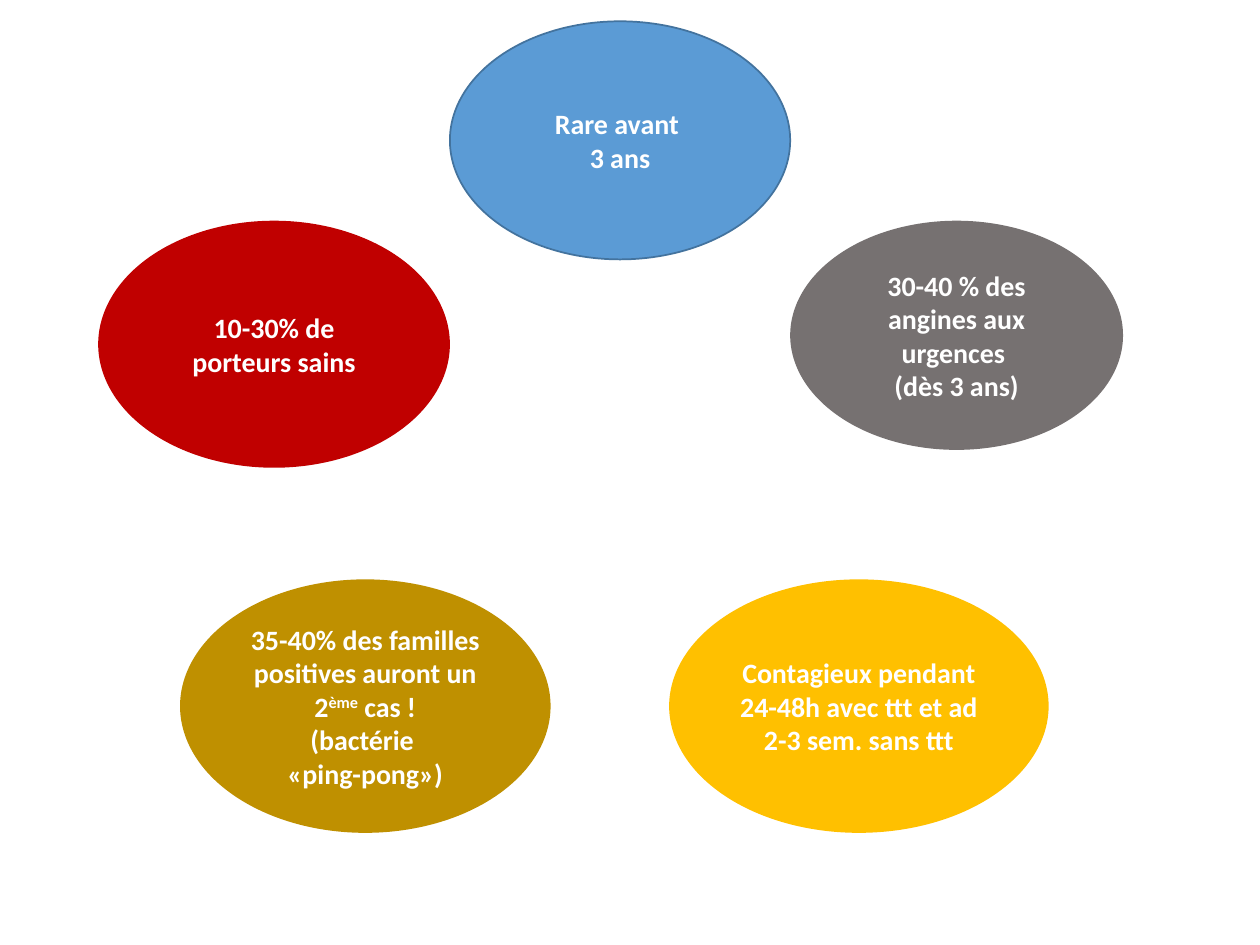
from dataclasses import dataclass
from typing import Optional

from pptx import Presentation, util as u
from pptx.dml.color import RGBColor
from pptx.enum import shapes, text

WHITE = RGBColor(0xFF, 0xFF, 0xFF)
BLUE = RGBColor(0x5B, 0x9B, 0xD5)
DARK_BLUE = RGBColor(0x43, 0x73, 0x9E)
GREY = RGBColor(0x76, 0x71, 0x71)
RED = RGBColor(0xC0, 0x00, 0x00)
YELLOW = RGBColor(0xFF, 0xC0, 0x00)
OCHRE = RGBColor(0xBF, 0x90, 0x00)

UPPER_ROW = 4.45
LOWER_ROW = 11.68
LOWER_HEIGHT = 5.11


@dataclass(frozen=True)
class Fact:
    left: float
    top: float
    width: float
    height: float
    fill: RGBColor
    lines: tuple[str, ...]
    outline: Optional[RGBColor] = None
    superscript: str = ""


FACTS = (
    Fact(9.07, 0.43, 6.86, 4.8, BLUE, ("Rare avant ", "3 ans"), outline=DARK_BLUE),
    Fact(15.93, UPPER_ROW, 6.71, 4.62, GREY,
         ("30-40 % des angines aux urgences ", "(dès 3 ans)")),
    Fact(1.98, UPPER_ROW, 7.09, 4.98, RED, ("10-30% de porteurs sains",)),
    Fact(13.49, LOWER_ROW, 7.65, LOWER_HEIGHT, YELLOW,
         ("Contagieux pendant 24-48h avec ttt et ad 2-3 sem. sans ttt",)),
    Fact(3.63, LOWER_ROW, 7.47, LOWER_HEIGHT, OCHRE,
         ("35-40% des familles positives auront un 2ème cas !", "(bactérie ", "«ping-pong»)"),
         superscript="ème"),
)


def add_span(para, content: str, *, size: float = 16, bold: bool = True,
             color: RGBColor = WHITE, name: str = "Calibri", raised: bool = False) -> None:
    span = para.add_run()
    span.text = content
    span.font.size = u.Pt(size)
    span.font.bold = bold
    span.font.name = name
    span.font.color.rgb = color
    if raised:
        span._r.get_or_add_rPr().set("baseline", "30000")


def add_line(para, line: str, superscript: str) -> None:
    para.alignment = text.PP_ALIGN.CENTER
    if superscript and superscript in line:
        before, mark, after = line.partition(superscript)
        add_span(para, before)
        add_span(para, mark, raised=True)
        add_span(para, after)
    else:
        add_span(para, line)


def add_fact(page, fact: Fact) -> None:
    ellipse = page.shapes.add_shape(
        shapes.MSO_SHAPE.OVAL, u.Cm(fact.left), u.Cm(fact.top),
        u.Cm(fact.width), u.Cm(fact.height))
    ellipse.shadow.inherit = False
    ellipse.fill.solid()
    ellipse.fill.fore_color.rgb = fact.fill
    if fact.outline is None:
        ellipse.line.fill.background()
    else:
        ellipse.line.color.rgb = fact.outline
        ellipse.line.width = u.Pt(1)
    frame = ellipse.text_frame
    frame.word_wrap = True
    frame.vertical_anchor = text.MSO_ANCHOR.MIDDLE
    for index, line in enumerate(fact.lines):
        para = frame.add_paragraph() if index else frame.paragraphs[0]
        add_line(para, line, fact.superscript)


def main() -> None:
    deck = Presentation()
    deck.slide_width = u.Cm(25.4)
    deck.slide_height = u.Cm(19.05)
    page = deck.slides.add_slide(deck.slide_layouts[6])
    for fact in FACTS:
        add_fact(page, fact)
    deck.save("out.pptx")


if __name__ == "__main__":
    main()
